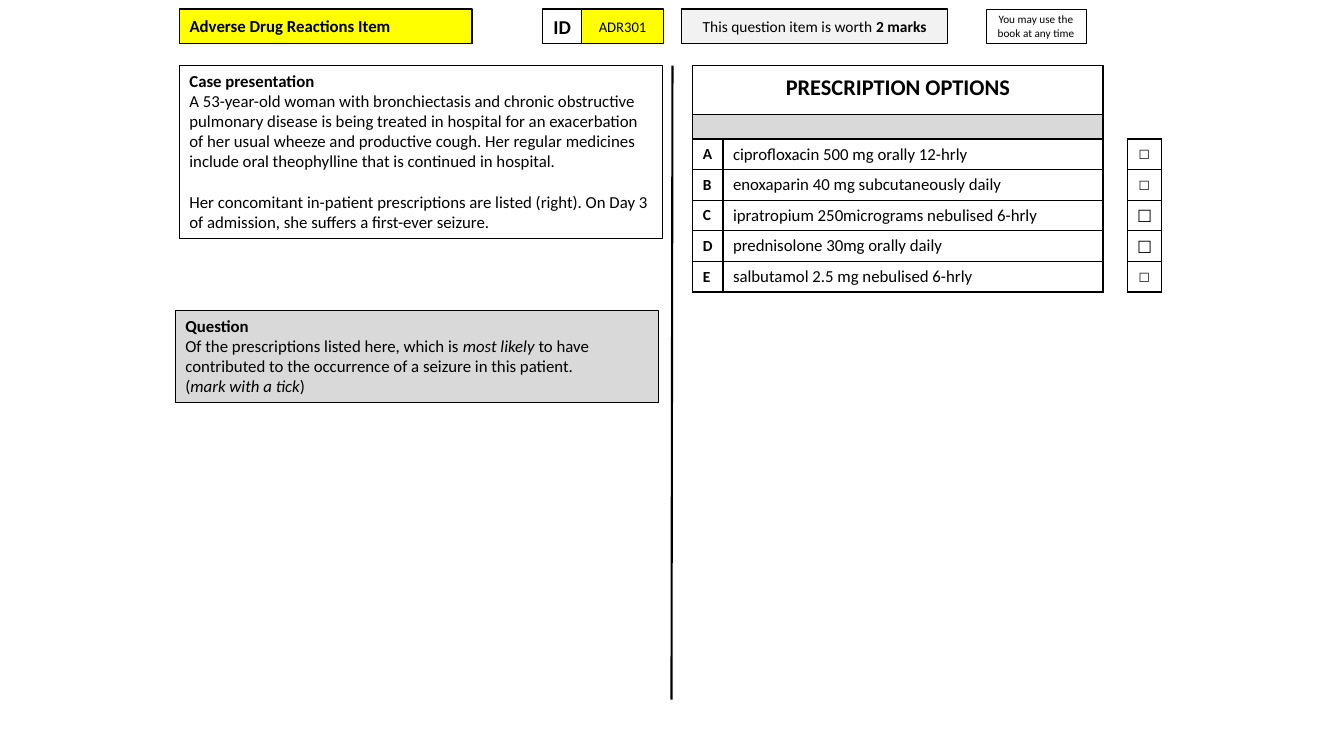
from pptx import Presentation
from pptx import util as u
from pptx.dml.color import RGBColor
from pptx.enum import shapes, text
from pptx.oxml import parse_xml
from pptx.oxml.ns import nsdecls
from lxml import etree

BLACK, WHITE, YELLOW, GREY, PALE = "000000", "FFFFFF", "FFFF00", "D9D9D9", "F2F2F2"
LEFT, CENTER = text.PP_ALIGN.LEFT, text.PP_ALIGN.CENTER
MIDDLE, TOP = text.MSO_ANCHOR.MIDDLE, text.MSO_ANCHOR.TOP


def paint(color_format, color):
    """Fill a shape, cell, line or font with a hex colour."""
    if hasattr(color_format, "solid"):
        color_format.solid()
        color_format = color_format.fore_color
    color_format.rgb = RGBColor.from_string(color)


def write(text_frame, paragraphs, size, align=LEFT, anchor=TOP, font="Calibri"):
    """Write paragraphs, each a list of (text, style); style may hold b and i."""
    text_frame.word_wrap = True
    text_frame.vertical_anchor = anchor
    for index, runs in enumerate(paragraphs):
        paragraph = text_frame.add_paragraph() if index else text_frame.paragraphs[0]
        paragraph.alignment = align
        for words, style in runs:
            run = paragraph.add_run()
            run.text = words
            run.font.name = font
            run.font.size = u.Pt(size)
            run.font.bold = "b" in style
            run.font.italic = "i" in style
            paint(run.font.color, BLACK)


presentation = Presentation()
presentation.slide_width = u.Inches(13.33)
presentation.slide_height = u.Inches(7.5)
slide = presentation.slides.add_slide(presentation.slide_layouts[5])

# Header strip: left, width, fill, line width, text size, alignment, runs
strip = [
    (1.78, 2.9, YELLOW, 1, 12, LEFT, [("Adverse Drug Reactions Item", "b")]),
    (5.77, 0.81, YELLOW, 1, 10.5, CENTER, [("ADR301", "")]),
    (5.38, 0.39, None, 1, 14, CENTER, [("ID", "b")]),
    (6.76, 2.64, PALE, 1, 11, CENTER, [("This question item is worth ", ""), ("2 marks", "b")]),
    (9.78, 0.99, None, 0.25, 8, CENTER, [("You may use the book at any time", "")]),
]
boxes = [((left, 0.09, width, 0.34), fill, line, size, align, MIDDLE, [runs])
         for left, width, fill, line, size, align, runs in strip]

# Case and question panels
boxes.append(((1.78, 0.65, 4.79, 1.72), None, 0.75, 12, LEFT, TOP, [
    [("Case presentation", "b")],
    [("A 53-year-old woman with bronchiectasis and chronic obstructive pulmonary disease "
      "is being treated in hospital for an exacerbation of her usual wheeze and productive "
      "cough. Her regular medicines include oral theophylline that is continued in hospital.", "")],
    [("Her concomitant in-patient prescriptions are listed (right). On Day 3 of admission, "
      "she suffers a first-ever seizure.", "")],
]))
boxes.append(((1.74, 3.08, 4.79, 0.91), GREY, 0.75, 12, LEFT, TOP, [
    [("Question", "b")],
    [("Of the prescriptions listed here, which is ", ""), ("most likely ", "i"),
     ("to have contributed to the occurrence of a seizure in this patient.", "")],
    [("(", ""), ("mark with a tick", "i"), (")", "")],
]))

# The first box is the slide title; the others are rectangles
for index, (place, fill, line, size, align, anchor, paragraphs) in enumerate(boxes):
    left, top, width, height = map(u.Inches, place)
    if index == 0:
        shape = slide.shapes.title
        shape.left, shape.top, shape.width, shape.height = left, top, width, height
        shape.text_frame.auto_size = text.MSO_AUTO_SIZE.NONE
    else:
        shape = slide.shapes.add_shape(shapes.MSO_SHAPE.RECTANGLE, left, top, width, height)
        shape.shadow.inherit = False
    if fill:
        paint(shape.fill, fill)
    else:
        shape.fill.background()
    paint(shape.line.fill, BLACK)
    shape.line.width = u.Pt(line)
    write(shape.text_frame, paragraphs, size, align, anchor)
    if len(paragraphs) == 3 and not fill:
        shape.text_frame.paragraphs[2].space_before = u.Pt(14.5)

# Prescription table: letter, medicine, gap, tick box
options = [
    ("A", "ciprofloxacin 500 mg orally 12-hrly", 9),
    ("B", "enoxaparin 40 mg subcutaneously daily", 9),
    ("C", "ipratropium 250micrograms nebulised 6-hrly", 12),
    ("D", "prednisolone 30mg orally daily", 12),
    ("E", "salbutamol 2.5 mg nebulised 6-hrly", 9),
]
column_widths = [0.3, 3.77, 0.23, 0.34]
row_heights = [0.49, 0.24] + [0.3] * len(options)
frame = slide.shapes.add_table(len(row_heights), len(column_widths), u.Inches(6.87),
                               u.Inches(0.65), u.Inches(sum(column_widths)),
                               u.Inches(sum(row_heights)))
table = frame.table
table.first_row = table.horz_banding = False
table._tbl.tblPr.find("{*}tableStyleId").text = "{2D5ABB26-0587-4C30-8999-92F81FD0307C}"
for column, width in zip(table.columns, column_widths):
    column.width = u.Inches(width)
for row, height in zip(table.rows, row_heights):
    row.height = u.Inches(height)
for row_index in (0, 1):
    table.cell(row_index, 0).merge(table.cell(row_index, 1))

# Cell borders and fills
header_sides = [["LRTB", "RTB", "L", ""], ["LRTB", "RTB", "L", "B"]]
option_sides = ["LRTB", "LRTB", "LR", "LRTB"]
for row_index, row in enumerate(table.rows):
    row_sides = header_sides[row_index] if row_index < 2 else option_sides
    for column_index, cell in enumerate(row.cells):
        properties = cell._tc.get_or_add_tcPr()
        for side in row_sides[column_index]:
            properties.append(parse_xml(
                f'<a:ln{side} {nsdecls("a")} w="12700"><a:solidFill>'
                f'<a:srgbClr val="{BLACK}"/></a:solidFill></a:ln{side}>'))
        if row_index == 1 and column_index < 2:
            paint(cell.fill, GREY)
        elif row_index == 1 and column_index == 3:
            paint(cell.fill, WHITE)
        else:
            cell.fill.background()
        # Small end mark keeps empty cells from stretching their row
        paragraph = cell.text_frame.paragraphs[0]
        end_mark = etree.SubElement(paragraph._p, "{%s}endParaRPr" % paragraph._p.nsmap["a"])
        end_mark.set("sz", "800")

# Table text
heading = table.cell(0, 0)
heading.margin_bottom = u.Inches(0.13)
write(heading.text_frame, [[("PRESCRIPTION OPTIONS", "b")]], 16, CENTER)
heading.vertical_anchor = text.MSO_ANCHOR.BOTTOM
for row_index, (letter, medicine, tick_size) in enumerate(options, start=2):
    letter_cell, medicine_cell, gap_cell, tick_cell = table.rows[row_index].cells
    write(letter_cell.text_frame, [[(letter, "b")]], 11)
    write(medicine_cell.text_frame, [[(medicine, "")]], 12)
    write(tick_cell.text_frame, [[("☐", "")]], tick_size, CENTER, font="Noto Sans CJK JP")
    tick_run = tick_cell.text_frame.paragraphs[0].runs[0]
    east_asian = etree.SubElement(tick_run.font._element, "{%s}ea" % tick_run._r.nsmap["a"])
    east_asian.set("typeface", "Noto Sans CJK JP")
    tick_cell.margin_top = tick_cell.margin_bottom = 0
    for cell in (letter_cell, medicine_cell, tick_cell):
        cell.vertical_anchor = MIDDLE

# Divider between the case and the options
divider = slide.shapes.add_connector(shapes.MSO_CONNECTOR.STRAIGHT, u.Inches(6.67),
                                     u.Inches(0.65), u.Inches(6.66), u.Inches(6.94))
paint(divider.line.fill, BLACK)
divider.line.width = u.Pt(1.5)
etree.SubElement(divider._element.spPr, "{%s}effectLst" % divider._element.nsmap["a"])

presentation.save("out.pptx")
